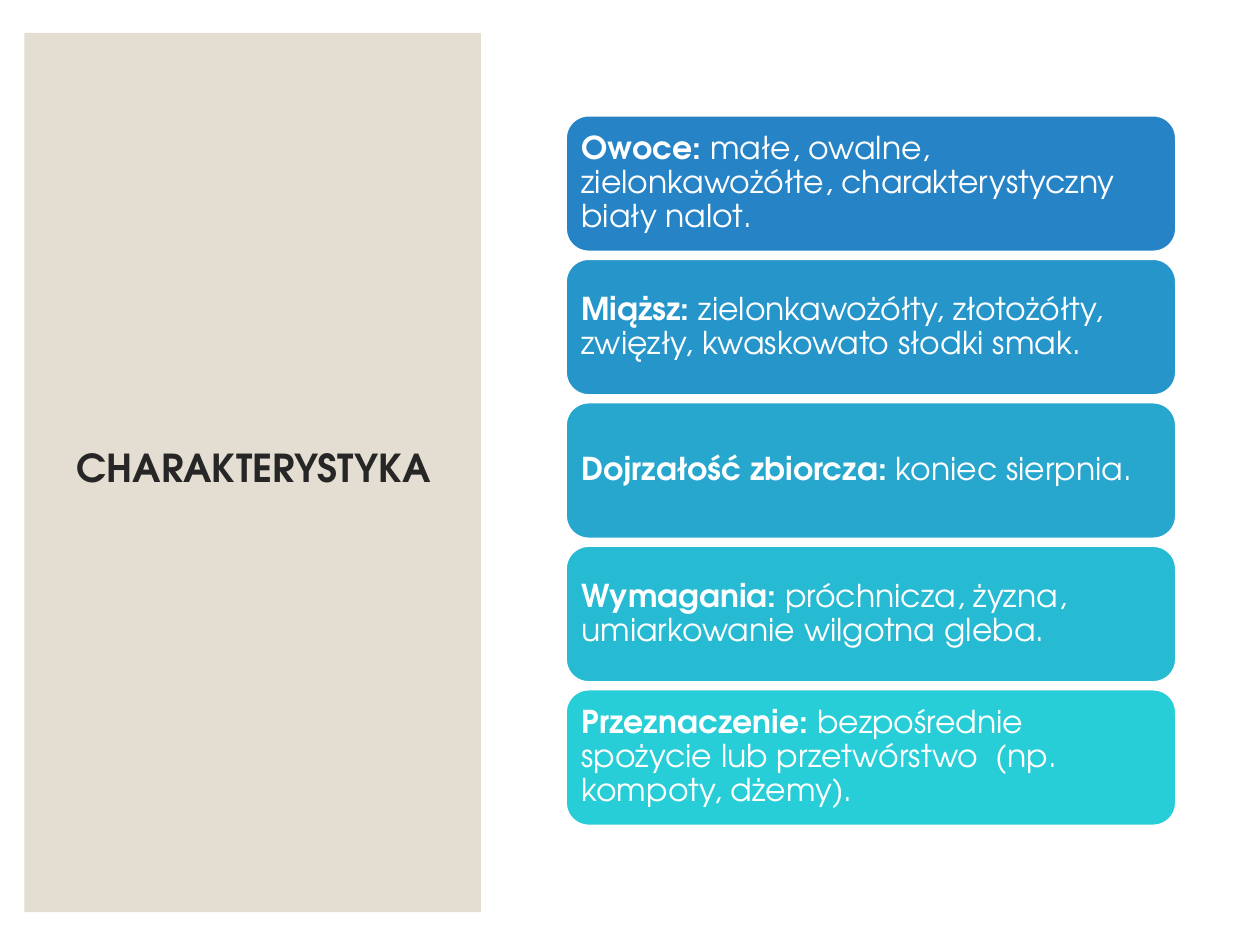
import pptx
import pptx.util
import pptx.dml.color
import pptx.enum.shapes
import pptx.enum.text

Pt = pptx.util.Pt
KINDS = pptx.enum.shapes.MSO_SHAPE
ALIGN = pptx.enum.text.PP_ALIGN
MIDDLE = pptx.enum.text.MSO_ANCHOR.MIDDLE

# Content
TITLE = "CHARAKTERYSTYKA"
CARDS = [
    ("Owoce: ", "małe, owalne, zielonkawożółte, charakterystyczny biały nalot."),
    ("Miąższ: ", "zielonkawożółty, złotożółty, zwięzły, kwaskowato słodki smak."),
    ("Dojrzałość zbiorcza: ", "koniec sierpnia."),
    ("Wymagania: ", "próchnicza, żyzna, umiarkowanie wilgotna gleba."),
    ("Przeznaczenie: ", "bezpośrednie spożycie lub przetwórstwo  (np. kompoty, dżemy)."),
]

THEME = {
    "font": "TeX Gyre Adventor",
    "title": 22,
    "body": 18,
    "dark": "262626",
    "light": "FFFFFF",
    "panel": "E3DED1",
    "cards": ["2683C6", "2695CA", "27A7CE", "27BAD3", "27CED7"],
}

# Layout in points
PANEL = (13.9, 18.8, 260.9, 502.4)
HEAD = (33.8, 43.9, 222.5, 449.3)
LEFT, TOP, WIDTH, HEIGHT = 323.5, 66.1, 348.5, 77.6
PITCH = 82
INSET = 5.04


def color(name):
    return pptx.dml.color.RGBColor.from_string(name)


def add_box(slide, kind, place, fill):
    box = slide.shapes.add_shape(kind, *map(Pt, place))
    box.shadow.inherit = False
    box.fill.solid()
    box.fill.fore_color.rgb = color(fill)
    box.line.fill.background()
    return box


def style(para, size, ink, align):
    para.alignment = align
    para.line_spacing = 0.9
    para.font.name = THEME["font"]
    para.font.size = Pt(size)
    para.font.color.rgb = color(ink)


def add_title(slide):
    frame = slide.shapes.add_textbox(*map(Pt, HEAD)).text_frame
    frame.word_wrap = True
    frame.vertical_anchor = MIDDLE
    para = frame.paragraphs[0]
    para.text = TITLE
    style(para, THEME["title"], THEME["dark"], ALIGN.CENTER)
    para.font.bold = True


def add_card(slide, row, label, text):
    place = (LEFT, TOP + row * PITCH, WIDTH, HEIGHT)
    card = add_box(slide, KINDS.ROUNDED_RECTANGLE, place, THEME["cards"][row])
    card.line.color.rgb = color(THEME["light"])
    card.line.width = Pt(1)
    frame = card.text_frame
    frame.word_wrap = True
    frame.vertical_anchor = MIDDLE
    frame.margin_left = frame.margin_right = Pt(INSET)
    frame.margin_top = frame.margin_bottom = Pt(INSET)
    para = frame.paragraphs[0]
    style(para, THEME["body"], THEME["light"], ALIGN.LEFT)
    for part, bold in ((label, True), (text, False)):
        run = para.add_run()
        run.text = part
        run.font.bold = bold


def main():
    deck = pptx.Presentation()
    deck.slide_width, deck.slide_height = Pt(720), Pt(540)
    slide = deck.slides.add_slide(deck.slide_layouts[6])

    # Side panel with title
    add_box(slide, KINDS.RECTANGLE, PANEL, THEME["panel"])
    add_title(slide)

    # Stack of cards
    for row, (label, text) in enumerate(CARDS):
        add_card(slide, row, label, text)

    deck.save("out.pptx")


if __name__ == "__main__":
    main()
